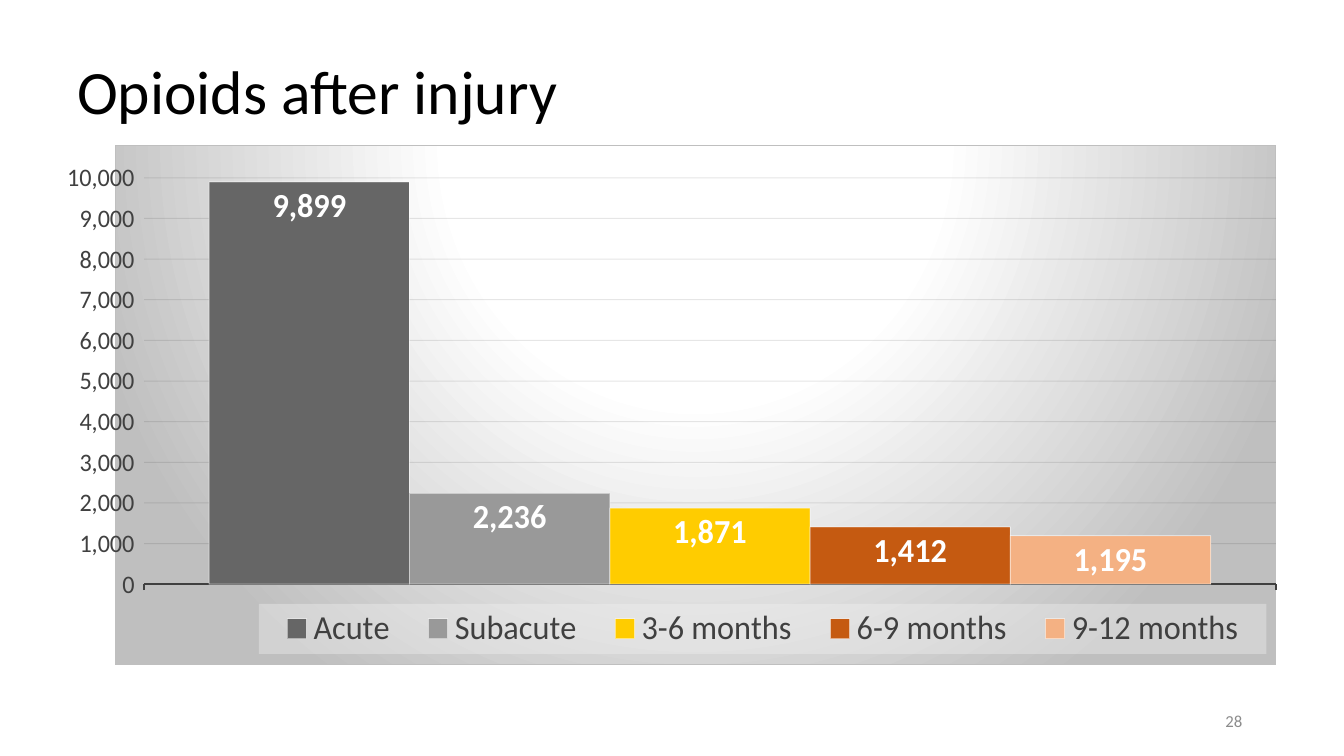
import pptx
import pptx.chart.data
import pptx.dml.color
import pptx.enum.chart
import pptx.enum.text
import pptx.oxml
import pptx.oxml.ns
import pptx.util

TITLE = "Opioids after injury"
PAGE = "28"
PHASES = [
    ("Acute", 9899, "666666"),
    ("Subacute", 2236, "999999"),
    ("3-6 months", 1871, "FFCC00"),
    ("6-9 months", 1412, "C55A11"),
    ("9-12 months", 1195, "F4B183"),
]
COLORS = {"title": "000000", "text": "404040", "page": "8C8C8C", "white": "FFFFFF",
          "edge": "BFBFBF", "grid": "0D0D0D", "legend": "F2F2F2"}
FONT = "Calibri"
WIDE, HIGH = 13.33, 7.5
SIDE = WIDE / 20
BODY = WIDE - 2 * SIDE
NUMBER = "#,##0"
PLOT = (0.053, 0.062, 0.975, 0.783)
LEGEND = (0.124, 0.883, 0.868, 0.096)
SPACES = pptx.oxml.ns.nsdecls("c", "a")

inch = pptx.util.Inches
qn = pptx.oxml.ns.qn


def rgb(name):
    return pptx.dml.color.RGBColor.from_string(COLORS.get(name, name))


def style(font, size, color, bold=False):
    font.name, font.size, font.bold = FONT, pptx.util.Pt(size), bold
    font.color.rgb = rgb(color)


def add_text(slide, text, box, size, color, align="LEFT", space=1.0):
    frame = slide.shapes.add_textbox(*map(inch, box)).text_frame
    frame.word_wrap = True
    frame.vertical_anchor = pptx.enum.text.MSO_ANCHOR.MIDDLE
    para = frame.paragraphs[0]
    para.alignment = getattr(pptx.enum.text.PP_ALIGN, align)
    para.line_spacing = space
    run = para.add_run()
    run.text = text
    style(run.font, size, color)


def set_line(line, color, width, alpha=100):
    """Colour a line; alpha is its opacity in percent."""
    line.color.rgb = rgb(color)
    line.width = pptx.util.Pt(width)
    if alpha < 100:
        for node in line._get_or_add_ln().iter(qn("a:srgbClr")):
            node.append(pptx.oxml.parse_xml(f'<a:alpha {SPACES} val="{alpha * 1000}"/>'))


def layout(box, inner=False):
    """Build a manual layout from shares of the chart's size."""
    target = '<c:layoutTarget val="inner"/>' if inner else ""
    modes = '<c:xMode val="edge"/><c:yMode val="edge"/>'
    sizes = "".join(f'<c:{key} val="{val}"/>' for key, val in zip("xywh", box))
    return pptx.oxml.parse_xml(
        f"<c:layout {SPACES}><c:manualLayout>{target}{modes}{sizes}</c:manualLayout></c:layout>")


def place(parent, index, node):
    for old in parent.findall(qn("c:layout")):
        parent.remove(old)
    parent.insert(index, node)


def paint(chart):
    """Give the chart its radial backdrop and the legend its pale panel."""
    stops = "".join(
        f'<a:gs pos="{pos}000"><a:srgbClr val="{COLORS[name]}"/></a:gs>'
        for pos, name in [(0, "white"), (39, "white"), (100, "edge")])
    back = (f'<c:spPr {SPACES}><a:gradFill><a:gsLst>{stops}</a:gsLst><a:path path="circle">'
            '<a:fillToRect l="50000" t="-80000" r="50000" b="180000"/></a:path></a:gradFill>'
            f'<a:ln w="9525"><a:solidFill><a:srgbClr val="{COLORS["edge"]}"/></a:solidFill>'
            '</a:ln></c:spPr>')
    panel = (f'<c:spPr {SPACES}><a:solidFill><a:srgbClr val="{COLORS["legend"]}">'
             '<a:alpha val="39000"/></a:srgbClr></a:solidFill>'
             '<a:ln><a:noFill/></a:ln></c:spPr>')
    root = chart.element
    root.find(qn("c:chart")).addnext(pptx.oxml.parse_xml(back))
    place(next(root.iter(qn("c:plotArea"))), 0, layout(PLOT, inner=True))
    legend = next(root.iter(qn("c:legend")))
    place(legend, 1, layout(LEGEND))
    legend.find(qn("c:overlay")).addnext(pptx.oxml.parse_xml(panel))


def add_bars(slide, box):
    data = pptx.chart.data.CategoryChartData(number_format=NUMBER)
    data.categories = [" "]
    for name, count, _ in PHASES:
        data.add_series(name, [count])
    enums = pptx.enum.chart
    chart = slide.shapes.add_chart(
        enums.XL_CHART_TYPE.COLUMN_CLUSTERED, *map(inch, box), data).chart
    style(chart.font, 10, "title")
    chart.has_title = False

    plot = chart.plots[0]
    plot.gap_width, plot.overlap, plot.vary_by_categories = 65, 0, False
    for series, (_, _, color) in zip(plot.series, PHASES):
        series.format.fill.solid()
        series.format.fill.fore_color.rgb = rgb(color)
        set_line(series.format.line, "white", 0.75, alpha=50)
        labels = series.data_labels
        labels.show_value = True
        labels.position = enums.XL_LABEL_POSITION.INSIDE_END
        labels.number_format, labels.number_format_is_linked = NUMBER, False
        style(labels.font, 24, "white", bold=True)

    base, scale = chart.category_axis, chart.value_axis
    for axis, size in [(base, 12), (scale, 18)]:
        axis.major_tick_mark = enums.XL_TICK_MARK.OUTSIDE
        style(axis.tick_labels.font, size, "text")
    base.has_major_gridlines = False
    set_line(base.format.line, "text", 1.5)
    scale.minimum_scale, scale.maximum_scale, scale.major_unit = 0, 10000, 1000
    scale.tick_labels.number_format = NUMBER
    scale.tick_labels.number_format_is_linked = False
    scale.format.line.fill.background()
    set_line(scale.major_gridlines.format.line, "grid", 0.75, alpha=10)

    chart.has_legend = True
    chart.legend.position = enums.XL_LEGEND_POSITION.BOTTOM
    chart.legend.include_in_layout = False
    style(chart.legend.font, 24, "text")
    paint(chart)


def main():
    deck = pptx.Presentation()
    deck.slide_width, deck.slide_height = inch(WIDE), inch(HIGH)
    slide = deck.slides.add_slide(deck.slide_layouts[6])
    add_text(slide, TITLE, (SIDE, 0.44, BODY, 1), 44, "title", space=0.9)
    add_bars(slide, (SIDE, 1.44, BODY, 5.16))
    add_text(slide, PAGE, (9.42, 6.95, 3, 0.4), 12, "page", align="RIGHT")
    deck.save("out.pptx")


if __name__ == "__main__":
    main()
